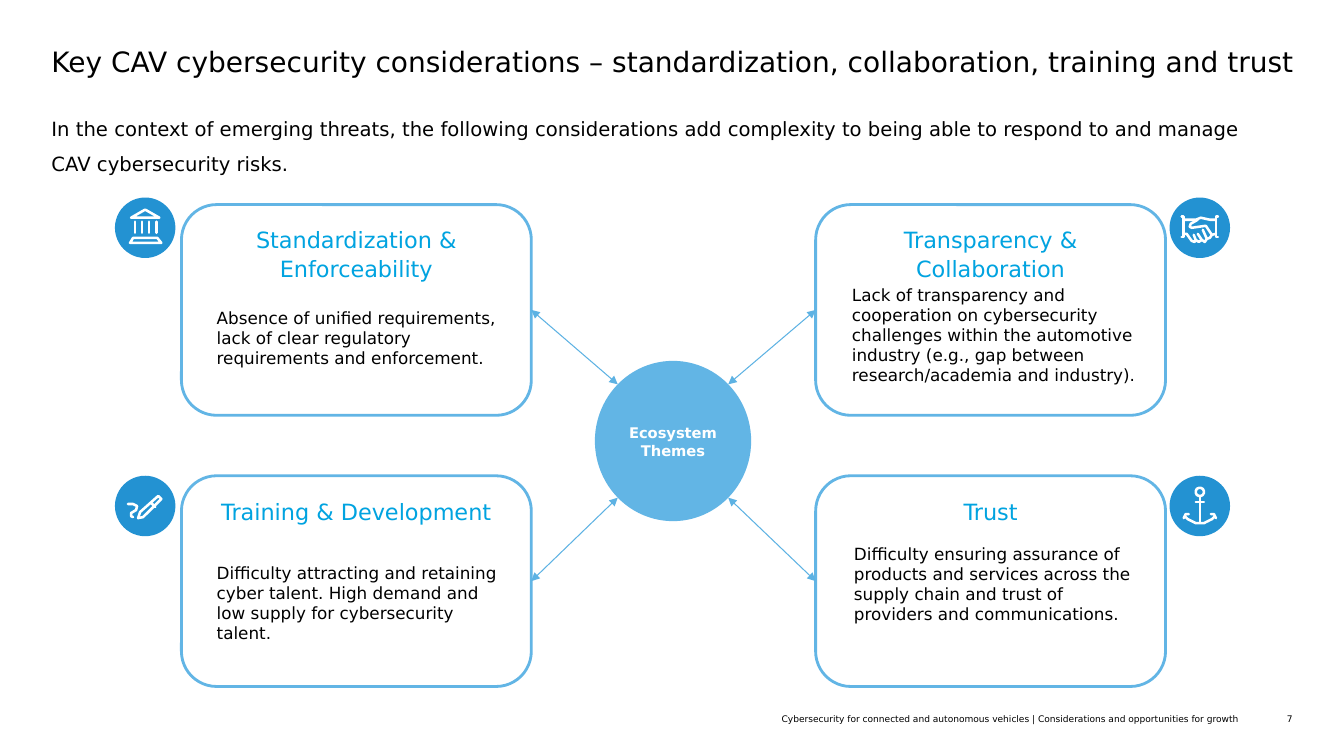
"""Build the slide on key cybersecurity considerations for connected vehicles."""
import math
from dataclasses import dataclass

from lxml import etree
from pptx import Presentation
from pptx import util as u
from pptx.dml.color import RGBColor
from pptx.enum import shapes, text
from pptx.oxml.ns import qn

CELL = u.Inches(0.1)
COLUMNS, ROWS = 133.3, 75
CARD_LEFTS, CARD_TOPS = (18, 80.9), (20.3, 47.2)
CARD_WIDTH, CARD_HEIGHT = 34.7, 20.9
HUB = (59, 35.8, 15.5, 15.9)
DISC = 6
DISC_LEFTS, DISC_TOPS = (11.4, 116), (19.6, 47.2)


@dataclass(frozen=True)
class Theme:
    """Colours, font and type sizes of the slide."""

    font: str = "DejaVu Sans"
    ink: str = "000000"
    paper: str = "FFFFFF"
    sky: str = "62B5E5"
    arrow: str = "5DB2E3"
    heading: str = "00A3E0"
    icon: str = "2392D2"
    title_size: float = 20
    card_size: float = 16
    lead_size: float = 14
    body_size: float = 12
    hub_size: float = 10.5
    footer_size: float = 6.5


THEME = Theme()


def arc(centre_x, centre_y, radius_x, radius_y, start, stop, steps=16):
    """Return points along an elliptical arc, with angles in degrees."""
    angles = [math.radians(start + (stop - start) * step / steps) for step in range(steps + 1)]
    return [(centre_x + radius_x * math.cos(angle), centre_y + radius_y * math.sin(angle))
            for angle in angles]


BANK = [
    [(16, 19.5), (30, 12), (44, 19.5), (16, 19.5)],
    *[[(column, 24.5), (column, 35)] for column in (19.5, 26.8, 34.1, 41.4)],
    [(18, 39.5), (42.5, 39.5), (45.5, 45), (15, 45), (18, 39.5)],
]
HANDSHAKE = [
    [(11.5, 19), (14, 19), (14, 39), (11.5, 39)],
    [(48.5, 19), (46, 19), (46, 39), (48.5, 39)],
    [(14, 22.5), (26, 22.5), (31, 20), (40, 22.5), (46, 22.5)],
    [(28, 22), (21, 26), (20, 29), (22, 30), (36, 28), (42, 37)],
    [(14, 36.5), (17, 36.5), (22, 43), (25, 43.5), (26, 41.5), (29, 44), (31.5, 42),
     (35, 43.5), (37, 41), (40, 40.5), (42, 37), (46, 36.5)],
    [(24, 37), (26, 41.5)],
    [(28.5, 35.5), (31.5, 42)],
    [(33, 32.5), (37, 41)],
]
PEN = [
    [(13, 28.5), (18, 28), (22, 30), (21, 34), (16.5, 37), (16.5, 39.5), (18.5, 41)],
    [(43, 19.5), (46, 23), (28.5, 41), (23, 42), (25.2, 36.5), (43, 19.5)],
    [(36, 27), (40, 31)],
]
ANCHOR = [
    arc(30, 16, 3.8, 3.8, 0, 360),
    [(30, 20), (30, 46)],
    [(26, 26), (34, 26)],
    arc(30, 36, 15.5, 11, 155, 25),
    [(14.5, 42.5), (16, 38.5), (19, 38.5)],
    [(45.5, 42.5), (44, 38.5), (41, 38.5)],
]

CARDS = [
    (0, 0, "Standardization & Enforceability", BANK, (21.5, 30.5, 29, 6.1),
     "Absence of unified requirements, lack of clear regulatory requirements and enforcement."),
    (0, 1, "Training & Development", PEN, (21.5, 55.8, 29, 8.1),
     "Difficulty attracting and retaining cyber talent. High demand and low supply for "
     "cybersecurity talent."),
    (1, 1, "Trust", ANCHOR, (84.7, 53.9, 27.6, 8.1),
     "Difficulty ensuring assurance of products and services across the supply chain and trust "
     "of providers and communications."),
    (1, 0, "Transparency & Collaboration", HANDSHAKE, (84.5, 28.2, 30.3, 10.1),
     "Lack of transparency and cooperation on cybersecurity challenges within the automotive "
     "industry (e.g., gap between research/academia and industry)."),
]


def cells(*counts):
    """Convert grid counts to lengths."""
    return [u.Emu(round(count * CELL)) for count in counts]


def colour(value):
    """Return a colour object from its hex value."""
    return RGBColor.from_string(value)


def assign(target, values):
    """Set each attribute named in a dict."""
    for name, value in values.items():
        setattr(target, name, value)


def write(box, words, size, ink=THEME.ink, bold=False, inset=0, wrap=True,
          anchor=text.MSO_ANCHOR.TOP, **paragraph_format):
    """Write one formatted paragraph into a shape."""
    frame = box.text_frame
    margins = dict.fromkeys(("margin_left", "margin_top", "margin_right", "margin_bottom"),
                            cells(inset)[0])
    assign(frame, {"word_wrap": wrap, "vertical_anchor": anchor, **margins})
    para = frame.paragraphs[0]
    assign(para, {"alignment": text.PP_ALIGN.LEFT, **paragraph_format})
    span = para.add_run()
    span.text = words
    assign(span.font, {"name": THEME.font, "size": u.Pt(size), "bold": bold})
    span.font.color.rgb = colour(ink)


def add_text(page, area, words, size, **options):
    """Add a text box."""
    write(page.shapes.add_textbox(*cells(*area)), words, size, **options)


def add_panel(page, kind, area, fill, outline=None):
    """Add a preset shape with a flat fill and an optional outline."""
    panel = page.shapes.add_shape(kind, *cells(*area))
    panel.shadow.inherit = False
    panel.fill.solid()
    panel.fill.fore_color.rgb = colour(fill)
    if outline:
        panel.line.color.rgb = colour(outline)
        panel.line.width = u.Pt(2)
    else:
        panel.line.fill.background()
    return panel


def add_icon(page, left, top, strokes):
    """Add a disc with a line drawing given in hundredths of an inch."""
    add_panel(page, shapes.MSO_SHAPE.OVAL, (left, top, DISC, DISC), THEME.icon)
    builder = page.shapes.build_freeform(*strokes[0][0], scale=CELL / 10)
    for stroke in strokes:
        builder.move_to(*stroke[0])
        builder.add_line_segments(stroke[1:], close=False)
    drawing = builder.convert_to_shape(*cells(left, top))
    drawing.shadow.inherit = False
    drawing.fill.background()
    drawing.line.color.rgb = colour(THEME.paper)
    drawing.line.width = u.Pt(1.8)
    drawing.element.spPr.find(qn("a:ln")).set("cap", "rnd")


def add_arrow(page, start, end):
    """Add a line with an arrowhead at each end."""
    arrow = page.shapes.add_connector(shapes.MSO_CONNECTOR.STRAIGHT, *cells(*start, *end))
    arrow.line.color.rgb = colour(THEME.arrow)
    arrow.line.width = u.Pt(0.75)
    properties = arrow.element.spPr
    for end_name in ("a:headEnd", "a:tailEnd"):
        etree.SubElement(properties.find(qn("a:ln")), qn(end_name), type="triangle")
    etree.SubElement(properties, qn("a:effectLst"))


def add_card(page, column, row, heading, strokes, body_area, body):
    """Add a card with its body, its icon and its arrow to the hub."""
    left, top = CARD_LEFTS[column], CARD_TOPS[row]
    card = add_panel(page, shapes.MSO_SHAPE.ROUNDED_RECTANGLE,
                     (left, top, CARD_WIDTH, CARD_HEIGHT), THEME.paper, THEME.sky)
    write(card, heading, THEME.card_size, ink=THEME.heading, inset=1,
          alignment=text.PP_ALIGN.CENTER, line_spacing=1.06)
    add_text(page, body_area, body, THEME.body_size)
    add_icon(page, DISC_LEFTS[column], DISC_TOPS[row], strokes)
    hub_left, hub_top, hub_width, hub_height = HUB
    reach = math.sqrt(0.125)
    start = (hub_left + hub_width * (0.5 + reach * (2 * column - 1)),
             hub_top + hub_height * (0.5 + reach * (2 * row - 1)))
    add_arrow(page, start, (left + CARD_WIDTH * (1 - column), top + CARD_HEIGHT / 2))


def main():
    """Build and save the deck."""
    deck = Presentation()
    deck.slide_width, deck.slide_height = cells(COLUMNS, ROWS)
    page = deck.slides.add_slide(deck.slide_layouts[6])
    add_text(page, (5.1, 4.4, 124.6, 3.7), "Key CAV cybersecurity considerations – "
             "standardization, collaboration, training and trust", THEME.title_size)
    add_text(page, (5.1, 10.4, 121.5, 7), "In the context of emerging threats, the following "
             "considerations add complexity to being able to respond to and manage CAV "
             "cybersecurity risks.", THEME.lead_size, line_spacing=1.5)
    for card in CARDS:
        add_card(page, *card)
    hub = add_panel(page, shapes.MSO_SHAPE.OVAL, HUB, THEME.sky)
    write(hub, "Ecosystem Themes", THEME.hub_size, ink=THEME.paper, bold=True, inset=1,
          anchor=text.MSO_ANCHOR.MIDDLE, alignment=text.PP_ALIGN.CENTER, line_spacing=1.06)
    for left, width, words in (
            (77, 45.9, "Cybersecurity for connected and autonomous vehicles | "
                       "Considerations and opportunities for growth"),
            (126.6, 1.6, "7")):
        add_text(page, (left, 70.8, width, 1.1), words, THEME.footer_size, wrap=False,
                 anchor=text.MSO_ANCHOR.MIDDLE, alignment=text.PP_ALIGN.RIGHT)
    deck.save("out.pptx")


if __name__ == "__main__":
    main()
